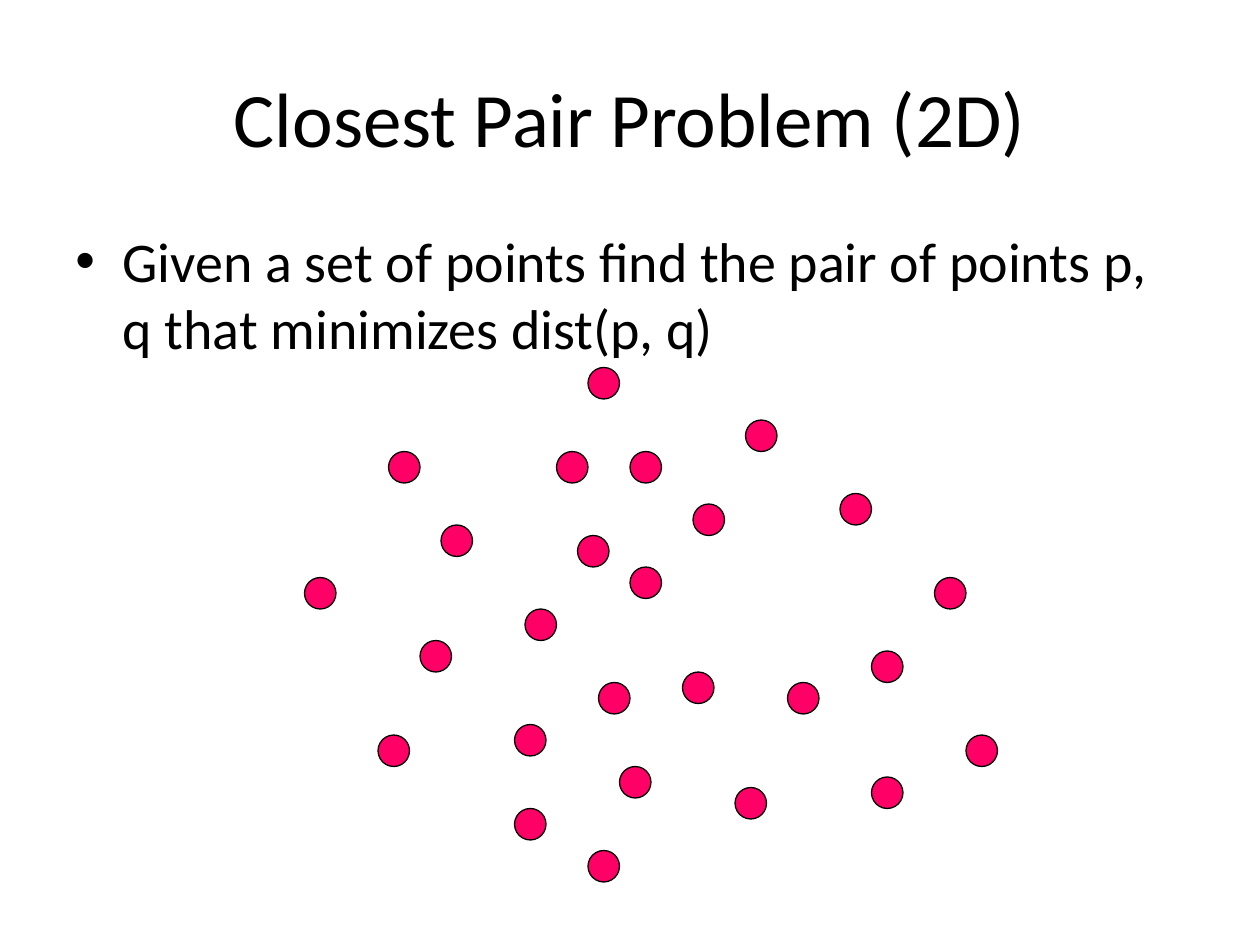
import pptx
import pptx.util
import pptx.dml.color
import pptx.enum.shapes
import pptx.enum.text
import pptx.oxml.ns
from lxml import etree

PX = 7620
FONT = "Calibri"
COLORS = {"background": "FFFFFF", "text": "000000", "point": "FF0066", "outline": "000000"}
GRID = 10
DIAMETER = 30
POINT_CELLS = [
    (56, 81), (56, 35), (29, 55), (36, 70), (37, 43), (40, 61), (49, 77),
    (49, 69), (57, 65), (42, 50), (50, 58), (55, 51), (53, 43), (60, 43),
    (71, 40), (60, 54), (80, 47), (65, 64), (66, 48), (59, 73), (75, 65),
    (89, 55), (70, 75), (83, 62), (83, 74), (92, 70),
]


def px(*lengths):
    return [pptx.util.Emu(length * PX) for length in lengths]


def color(name):
    return pptx.dml.color.RGBColor.from_string(COLORS[name])


def add_run(paragraph, text, size):
    run = paragraph.add_run()
    run.text = text
    run.font.name = FONT
    run.font.size = pptx.util.Pt(size)
    run.font.color.rgb = color("text")


def add_bullet(paragraph, indent):
    properties = paragraph._p.get_or_add_pPr()
    properties.set("marL", str(indent * PX))
    properties.set("indent", str(-indent * PX))
    for tag, key, value in (("a:buFont", "typeface", "Arial"), ("a:buChar", "char", "•")):
        etree.SubElement(properties, pptx.oxml.ns.qn(tag)).set(key, value)


def set_title(slide, text):
    title = slide.shapes.title
    title.left, title.top, title.width, title.height = px(60, 36, 1080, 150)
    title.text_frame.word_wrap = True
    title.text_frame.vertical_anchor = pptx.enum.text.MSO_ANCHOR.MIDDLE
    heading = title.text_frame.paragraphs[0]
    heading.alignment = pptx.enum.text.PP_ALIGN.CENTER
    add_run(heading, text, 44)


def add_statement(slide, text):
    statement = slide.shapes.add_textbox(*px(60, 210, 1080, 180))
    statement.text_frame.word_wrap = True
    paragraph = statement.text_frame.paragraphs[0]
    add_bullet(paragraph, 45)
    add_run(paragraph, text, 32)


def add_point(slide, column, row):
    point = slide.shapes.add_shape(
        pptx.enum.shapes.MSO_SHAPE.OVAL,
        *px(column * GRID, row * GRID, DIAMETER, DIAMETER),
    )
    point.shadow.inherit = False
    point.fill.solid()
    point.fill.fore_color.rgb = color("point")
    point.line.color.rgb = color("outline")
    point.line.width = pptx.util.Pt(0.75)


def main():
    deck = pptx.Presentation()
    deck.slide_width, deck.slide_height = px(1200, 900)
    slide = deck.slides.add_slide(deck.slide_layouts[5])
    slide.background.fill.solid()
    slide.background.fill.fore_color.rgb = color("background")
    set_title(slide, "Closest Pair Problem (2D)")
    add_statement(
        slide,
        "Given a set of points find the pair of points p, q that minimizes dist(p, q)",
    )
    for column, row in POINT_CELLS:
        add_point(slide, column, row)
    deck.save("out.pptx")


if __name__ == "__main__":
    main()
